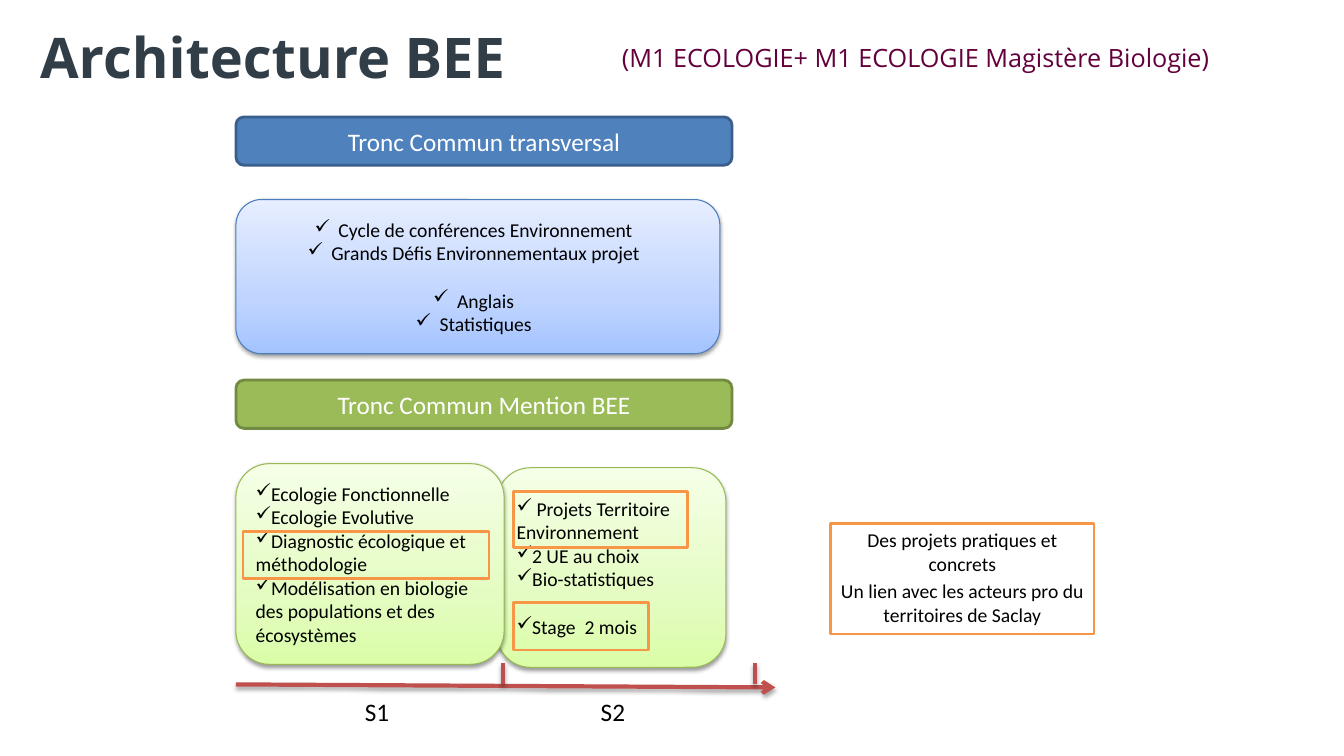
import pptx
import pptx.util
import pptx.dml.color
import pptx.enum.shapes
import pptx.enum.text
import pptx.oxml
import pptx.oxml.ns

Inches = pptx.util.Inches
Pt = pptx.util.Pt
SHAPES = pptx.enum.shapes.MSO_SHAPE
ALIGN = pptx.enum.text.PP_ALIGN
ANCHOR = pptx.enum.text.MSO_ANCHOR
NAMESPACE = pptx.oxml.ns.nsdecls("a")

BLACK, WHITE, ORANGE, RED = "000000", "FFFFFF", "F79646", "C0504D"
BLUE_STOPS = [(0, "A4C4FF"), (35, "BFD4FF"), (100, "E6EEFF")]
GREEN_STOPS = [(0, "DAFDA7"), (35, "E4FCC2"), (100, "F5FFE7")]
LEFT_EDGE = 2.34
LINE_GAP = 17

TITLE = ("Architecture BEE", (0.3, 0.09, 9, 1.02))
SUBTITLE = ("(M1 ECOLOGIE+ M1 ECOLOGIE Magistère Biologie)", (6.07, 0.37, 6.08, 0.4))
BANNERS = [
    ("Tronc Commun transversal", 1.16, "4F81BD", "3A5F8C"),
    ("Tronc Commun Mention BEE", 3.77, "9BBB59", "738A42"),
]
COMMON_COURSES = [
    ("Cycle de conférences Environnement", 0),
    ("Grands Défis Environnementaux projet", 0),
    ("Anglais", LINE_GAP),
    ("Statistiques", 0),
]
FIRST_SEMESTER = [
    ("Ecologie Fonctionnelle", 0),
    ("Ecologie Evolutive", 0),
    ("Diagnostic écologique et méthodologie", 0),
    ("Modélisation en biologie des populations et des écosystèmes", 0),
]
SECOND_SEMESTER = [
    (" Projets Territoire Environnement", 0),
    ("2 UE au choix", 0),
    ("Bio-statistiques", 0),
    ("Stage  2 mois", LINE_GAP),
]
PROJECT_NOTE = [
    ("Des projets pratiques et concrets", 0),
    ("Un lien avec les acteurs pro du territoires de Saclay", 3),
]
HIGHLIGHTS = [(2.41, 5.27, 2.44, 0.47), (5.09, 4.88, 1.73, 0.55), (5.09, 5.98, 1.34, 0.47)]
SEMESTERS = [("S1", 3.52, 4.99), ("S2", 5.86, 7.49)]


def colour(value):
    return pptx.dml.color.RGBColor.from_string(value)


def write(frame, lines, size, font, tint, align=ALIGN.LEFT, bullet=False, bold=False):
    for index, (text, gap) in enumerate(lines):
        para = frame.add_paragraph() if index else frame.paragraphs[0]
        para.alignment = align
        if index:
            para.space_before = Pt(gap)
        if bullet:
            para._p.get_or_add_pPr().append(
                pptx.oxml.parse_xml(f'<a:buChar {NAMESPACE} char="✓"/>'))
        span = para.add_run()
        span.text = text
        span.font.size = Pt(size)
        span.font.name = font
        span.font.bold = bold
        span.font.color.rgb = colour(tint)


def add_label(page, box, text, size, font, tint, bold=False):
    label = page.shapes.add_textbox(*map(Inches, box))
    label.text_frame.word_wrap = False
    write(label.text_frame, [(text, 0)], size, font, tint, bold=bold)
    return label


def add_block(page, kind, box, fill, line, width):
    block = page.shapes.add_shape(kind, *map(Inches, box))
    block.shadow.inherit = False
    if fill:
        block.fill.solid()
        block.fill.fore_color.rgb = colour(fill)
    else:
        block.fill.background()
    block.line.color.rgb = colour(line)
    block.line.width = Pt(width)
    block.text_frame.word_wrap = True
    return block


def add_shadow(properties, opacity, distance):
    for effects in properties.findall(pptx.oxml.ns.qn("a:effectLst")):
        properties.remove(effects)
    properties.append(pptx.oxml.parse_xml(
        f'<a:effectLst {NAMESPACE}><a:outerShdw blurRad="{Pt(3.1)}" dist="{Pt(distance)}" '
        f'dir="5400000" rotWithShape="0"><a:srgbClr val="{BLACK}">'
        f'<a:alpha val="{opacity * 1000}"/></a:srgbClr></a:outerShdw></a:effectLst>'))


def add_panel(page, box, stops, line, courses, align):
    panel = add_block(page, SHAPES.ROUNDED_RECTANGLE, box, WHITE, line, 0.75)
    properties = panel._element.spPr
    stop_list = "".join(
        f'<a:gs pos="{place * 1000}"><a:srgbClr val="{tint}"/></a:gs>' for place, tint in stops)
    solid = properties.find(pptx.oxml.ns.qn("a:solidFill"))
    properties.replace(solid, pptx.oxml.parse_xml(
        f'<a:gradFill {NAMESPACE} rotWithShape="1"><a:gsLst>{stop_list}</a:gsLst>'
        f'<a:lin ang="16200000" scaled="0"/></a:gradFill>'))
    add_shadow(properties, 38, 1.6)
    panel.text_frame.vertical_anchor = ANCHOR.MIDDLE
    write(panel.text_frame, courses, 14, "Calibri", BLACK, align, bullet=True)


def add_stroke(page, start, end, arrow=False):
    stroke = page.shapes.add_connector(
        pptx.enum.shapes.MSO_CONNECTOR.STRAIGHT, *map(Inches, start + end))
    stroke.line.color.rgb = colour(RED)
    stroke.line.width = Pt(3)
    if arrow:
        stroke.line._get_or_add_ln().append(
            pptx.oxml.parse_xml(f'<a:tailEnd {NAMESPACE} type="arrow"/>'))
    add_shadow(stroke._element.spPr, 35, 1.8)


def main():
    deck = pptx.Presentation()
    deck.slide_width, deck.slide_height = Inches(13.33), Inches(7.5)
    page = deck.slides.add_slide(deck.slide_layouts[6])

    text, box = TITLE
    title = add_label(page, box, text, 40, "Open Sans", "313E48", bold=True)
    title.text_frame.word_wrap = True
    title.text_frame.vertical_anchor = ANCHOR.MIDDLE
    title.text_frame.paragraphs[0].line_spacing = 0.9
    text, box = SUBTITLE
    add_label(page, box, text, 18, "Open Sans", "63003C")

    note = add_block(page, SHAPES.RECTANGLE, (8.24, 5.19, 2.61, 1.1), WHITE, ORANGE, 2)
    note.text_frame.vertical_anchor = ANCHOR.TOP
    write(note.text_frame, PROJECT_NOTE, 14, "Calibri", BLACK, ALIGN.CENTER)

    for text, top, fill, line in BANNERS:
        banner = add_block(page, SHAPES.ROUNDED_RECTANGLE,
                           (LEFT_EDGE, top, 4.92, 0.48), fill, line, 2)
        banner.text_frame.vertical_anchor = ANCHOR.MIDDLE
        write(banner.text_frame, [(text, 0)], 18, "Calibri", WHITE, ALIGN.CENTER)

    add_panel(page, (LEFT_EDGE, 1.98, 4.8, 1.53), BLUE_STOPS, "4B7EBC",
              COMMON_COURSES, ALIGN.CENTER)
    add_panel(page, (4.93, 4.64, 2.27, 1.98), GREEN_STOPS, "98B955",
              SECOND_SEMESTER, ALIGN.LEFT)

    add_stroke(page, (LEFT_EDGE, 6.79), (7.69, 6.82), arrow=True)
    for text, left, tick in SEMESTERS:
        add_label(page, (left, 6.86, 0.45, 0.4), text, 18, "Calibri", BLACK)
        add_stroke(page, (tick, 6.58), (tick, 6.79))

    add_panel(page, (LEFT_EDGE, 4.6, 2.66, 1.99), GREEN_STOPS, "98B955",
              FIRST_SEMESTER, ALIGN.LEFT)
    for box in HIGHLIGHTS:
        add_block(page, SHAPES.RECTANGLE, box, None, ORANGE, 2)

    deck.save("out.pptx")


if __name__ == "__main__":
    main()
